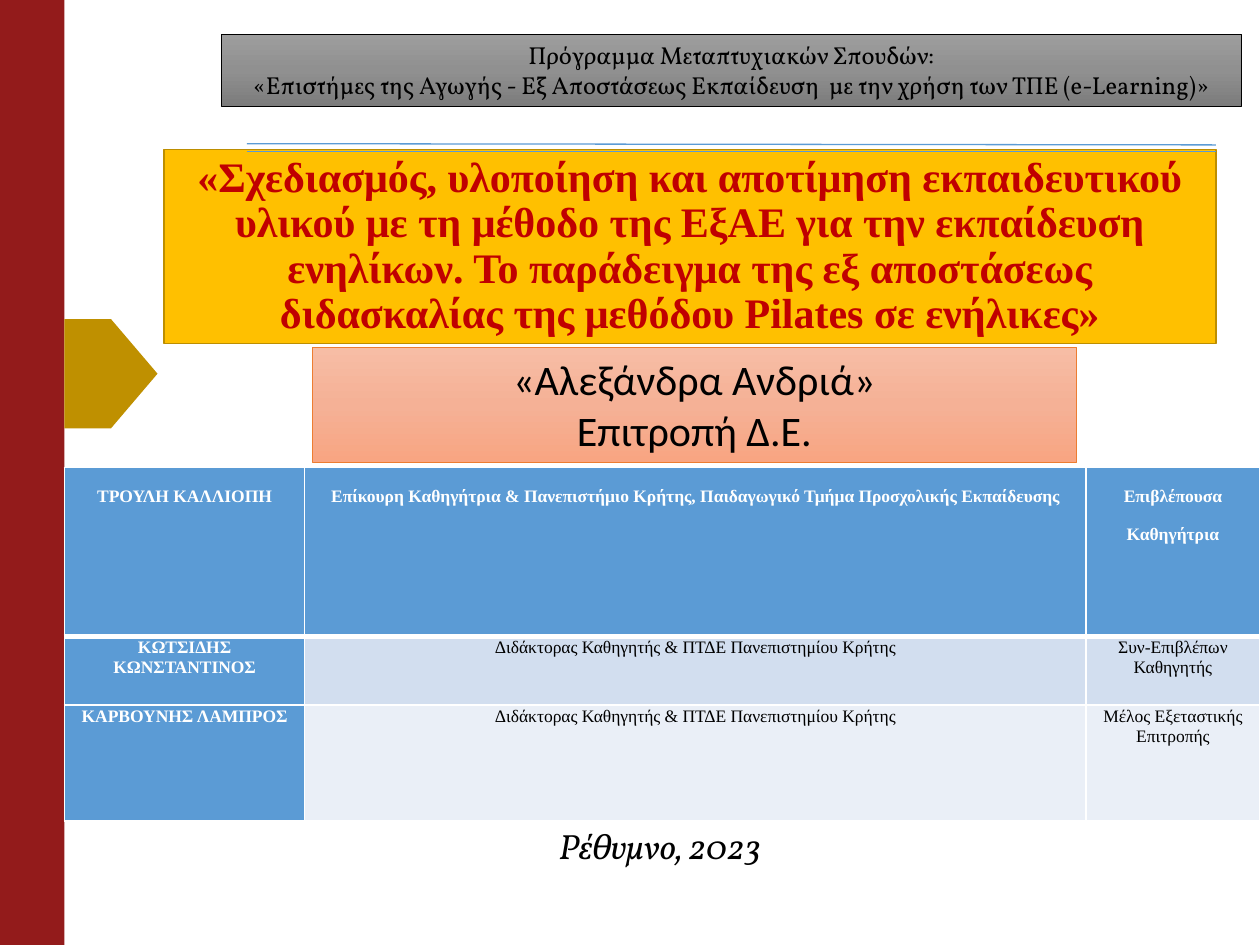
"""Build the title slide of a thesis presentation with its committee table."""
import copy
import pptx
import pptx.dml.color
import pptx.enum.shapes
import pptx.enum.text
import pptx.oxml
import pptx.oxml.ns
import pptx.util

Pt = pptx.util.Pt
SHAPES = pptx.enum.shapes.MSO_SHAPE
ANCHORS = pptx.enum.text.MSO_ANCHOR
CENTER = pptx.enum.text.PP_ALIGN.CENTER


def color(value):
    return pptx.dml.color.RGBColor.from_string(value)


def write(frame, lines, ink, spacing, anchor, font_format):
    frame.word_wrap = True
    frame.vertical_anchor = anchor
    for index, line in enumerate(lines):
        paragraph = frame.add_paragraph() if index else frame.paragraphs[0]
        paragraph.alignment = CENTER
        paragraph.line_spacing = spacing
        run = paragraph.add_run()
        run.text = line
        run.font.color.rgb = color(ink)
        for name, value in font_format.items():
            setattr(run.font, name, value)


presentation = pptx.Presentation()
presentation.slide_width, presentation.slide_height = Pt(720), Pt(540)
slide = presentation.slides.add_slide(presentation.slide_layouts[6])

title = (
    "«Σχεδιασμός, υλοποίηση και αποτίμηση εκπαιδευτικού υλικού με τη μέθοδο της ΕξΑΕ "
    "για την εκπαίδευση ενηλίκων. Το παράδειγμα της εξ αποστάσεως διδασκαλίας της "
    "μεθόδου Pilates σε ενήλικες»"
)
programme = [
    "Πρόγραμμα Μεταπτυχιακών Σπουδών:",
    "«Επιστήμες της Αγωγής - Εξ Αποστάσεως Εκπαίδευση  με την χρήση των ΤΠΕ (e-Learning)»",
]
author = ["«Αλεξάνδρα Ανδριά»", "Επιτροπή Δ.Ε."]
title_font = {"size": Pt(24), "name": "Times New Roman", "bold": True}
programme_font = {"size": Pt(14), "name": "Vollkorn"}
author_font = {"size": Pt(24), "name": "Calibri"}
place_font = {"size": Pt(20), "name": "Vollkorn", "italic": True}

boxes = [
    (SHAPES.RECTANGLE, (0, 0, 36.8, 540), ["931B1B"], None, None),
    (SHAPES.PENTAGON, (36.8, 182.3, 53.2, 62.5), ["BF9000"], None, None),
    (SHAPES.RECTANGLE, (93.6, 85.5, 601.3, 110.9), ["FFC000"], ("BD8E00", 1),
     ([title], "C00000", 0.9, ANCHORS.BOTTOM, title_font)),
    (SHAPES.RECTANGLE, (126.5, 19.6, 583, 41.2), ["9D9D9D", "909090", "7C7C7C"], ("000000", 0.5),
     (programme, "000000", 1.0, ANCHORS.TOP, programme_font)),
    (SHAPES.RECTANGLE, (178.5, 198.6, 436.7, 65.6), ["F7BDA5", "F5B196", "F8A582"], ("ED7D31", 0.5),
     (author, "000000", 1.0, ANCHORS.TOP, author_font)),
]
for preset, bounds, fills, outline, text in boxes:
    shape = slide.shapes.add_shape(preset, *map(Pt, bounds))
    shape.shadow.inherit = False
    if len(fills) == 1:
        shape.fill.solid()
        shape.fill.fore_color.rgb = color(fills[0])
    else:
        shape.fill.gradient()
        shape.fill.gradient_angle = 270
        stops = shape._element.spPr.find(".//" + pptx.oxml.ns.qn("a:gsLst"))
        stops.append(copy.deepcopy(stops[0]))
        for stop, position, value in zip(shape.fill.gradient_stops, (0, 0.5, 1), fills):
            stop.position = position
            stop.color.rgb = color(value)
    if outline:
        shape.line.color.rgb = color(outline[0])
        shape.line.width = Pt(outline[1])
    else:
        shape.line.fill.background()
    if text:
        write(shape.text_frame, *text)

for start, end in ((82.1, 82.8), (86.4, 86.4)):
    rule = slide.shapes.add_connector(
        pptx.enum.shapes.MSO_CONNECTOR.STRAIGHT, Pt(141.1), Pt(start), Pt(694.8), Pt(end))
    rule.line.color.rgb = color("5B9BD5")
    rule.line.width = Pt(0.75)
    rule._element.spPr.append(pptx.oxml.parse_xml(
        f'<a:effectLst {pptx.oxml.ns.nsdecls("a")}/>'))

place = slide.shapes.add_textbox(Pt(93.6), Pt(467.3), Pt(567.4), Pt(31.7))
write(place.text_frame, ["Ρέθυμνο, 2023"], "000000", 1.0, ANCHORS.MIDDLE, place_font)

committee = [
    ("ΤΡΟΥΛΗ ΚΑΛΛΙΟΠΗ",
     "Επίκουρη Καθηγήτρια & Πανεπιστήμιο Κρήτης, Παιδαγωγικό Τμήμα Προσχολικής Εκπαίδευσης",
     "Επιβλέπουσα Καθηγήτρια"),
    ("ΚΩΤΣΙΔΗΣ ΚΩΝΣΤΑΝΤΙΝΟΣ", "Διδάκτορας Καθηγητής & ΠΤΔΕ Πανεπιστημίου Κρήτης",
     "Συν-Επιβλέπων Καθηγητής"),
    ("ΚΑΡΒΟΥΝΗΣ ΛΑΜΠΡΟΣ", "Διδάκτορας Καθηγητής & ΠΤΔΕ Πανεπιστημίου Κρήτης",
     "Μέλος Εξεταστικής Επιτροπής"),
]
widths, heights = (137.3, 446.4, 99.5), (96.5, 39.4, 66.2)
row_fills = ("5B9BD5", "D2DEEF", "EAEFF7")
cell_format = {"margin_left": Pt(5), "margin_right": Pt(5), "margin_top": 0, "margin_bottom": 0}
table = slide.shapes.add_table(
    3, 3, Pt(36.8), Pt(267.1), Pt(sum(widths)), Pt(sum(heights))).table
for column, width in zip(table.columns, widths):
    column.width = Pt(width)
for row, height in zip(table.rows, heights):
    row.height = Pt(height)

for row_index, member in enumerate(committee):
    for column_index, words in enumerate(member):
        cell = table.cell(row_index, column_index)
        heading = row_index == 0 or column_index == 0
        for name, value in cell_format.items():
            setattr(cell, name, value)
        border_widths = {"L": 1, "R": 1, "T": 3 if row_index == 1 else 1,
                         "B": 3 if row_index == 0 else 1}
        for side, width in border_widths.items():
            cell._tc.get_or_add_tcPr().append(pptx.oxml.parse_xml(
                f'<a:ln{side} {pptx.oxml.ns.nsdecls("a")} w="{Pt(width)}"><a:solidFill>'
                f'<a:srgbClr val="FFFFFF"/></a:solidFill></a:ln{side}>'))
        cell.fill.solid()
        cell.fill.fore_color.rgb = color("5B9BD5" if heading else row_fills[row_index])
        write(cell.text_frame, [words], "FFFFFF" if heading else "000000",
              1.07 if row_index else 2.0, ANCHORS.TOP,
              {"size": Pt(10), "name": "Times New Roman", "bold": heading})

presentation.save("out.pptx")
